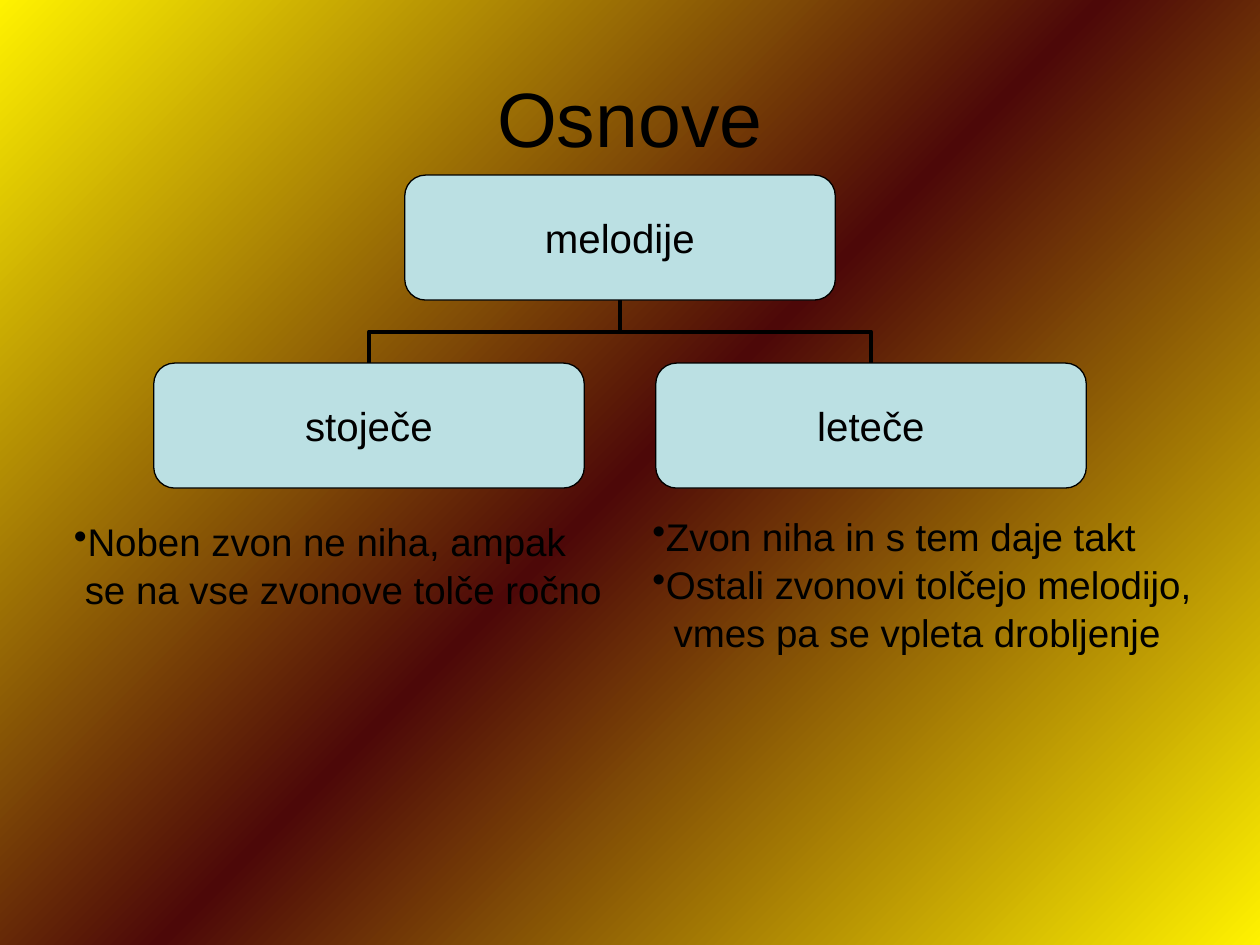
from copy import deepcopy
from dataclasses import dataclass

from lxml.etree import SubElement
from pptx import Presentation
from pptx.dml.color import RGBColor
from pptx.enum.shapes import MSO_CONNECTOR, MSO_SHAPE
from pptx.enum.text import MSO_ANCHOR, PP_ALIGN
from pptx.oxml.ns import qn
from pptx.shapes.autoshape import Shape
from pptx.slide import Slide
from pptx.util import Cm, Pt


@dataclass(frozen=True)
class Theme:
    font: str = "Arial"
    text: str = "000000"
    box: str = "BBE0E3"
    background: tuple = ((0, "FFF200"), (0.5, "4D0808"), (1, "FFF200"))
    title_size: int = 44
    box_size: int = 23
    note_size: int = 22
    line_spacing: float = 1.04


@dataclass(frozen=True)
class Node:
    label: str
    center: float
    top: float


@dataclass(frozen=True)
class NoteLine:
    text: str
    bullet: bool = True
    indent: float = 0


@dataclass(frozen=True)
class Note:
    left: float
    top: float
    height: float
    lines: tuple


THEME = Theme()
BLACK = RGBColor.from_string(THEME.text)
BOX_WIDTH, BOX_HEIGHT = 8.68, 2.52
NOTE_WIDTH = 11.4
ROOT_CENTER, CHILD_OFFSET = 12.5, 5.06
ROOT_TOP, CHILD_TOP = 3.53, 7.32

ROOT = Node("melodije", ROOT_CENTER, ROOT_TOP)
CHILDREN = (
    Node("stoječe", ROOT_CENTER - CHILD_OFFSET, CHILD_TOP),
    Node("leteče", ROOT_CENTER + CHILD_OFFSET, CHILD_TOP),
)
NOTES = (
    Note(12.9, 10.18, 4, (
        NoteLine("Zvon niha in s tem daje takt"),
        NoteLine("Ostali zvonovi tolčejo melodijo,"),
        NoteLine("vmes pa se vpleta drobljenje", False, 0.43),
    )),
    Note(1.24, 10.29, 2.13, (
        NoteLine("Noben zvon ne niha, ampak"),
        NoteLine("se na vse zvonove tolče ročno", False, 0.22),
    )),
)


def paint_background(slide: Slide) -> None:
    fill = slide.background.fill
    fill.gradient()
    fill.gradient_angle = 135
    stop_list = slide.element.find(".//" + qn("a:gsLst"))
    stop_list.append(deepcopy(stop_list[0]))
    for stop, (position, color) in zip(fill.gradient_stops, THEME.background):
        stop.position = position
        stop.color.rgb = RGBColor.from_string(color)


def style_paragraph(paragraph, size: int) -> None:
    paragraph.font.name = THEME.font
    paragraph.font.size = Pt(size)
    paragraph.font.color.rgb = BLACK


def add_title(slide: Slide, text: str) -> None:
    frame = slide.shapes.add_textbox(Cm(1.27), Cm(0.76), Cm(22.86), Cm(3.18)).text_frame
    frame.word_wrap = True
    frame.vertical_anchor = MSO_ANCHOR.MIDDLE
    paragraph = frame.paragraphs[0]
    paragraph.text = text
    paragraph.alignment = PP_ALIGN.CENTER
    style_paragraph(paragraph, THEME.title_size)


def add_node(slide: Slide, node: Node) -> Shape:
    shape = slide.shapes.add_shape(
        MSO_SHAPE.ROUNDED_RECTANGLE, Cm(node.center - BOX_WIDTH / 2), Cm(node.top),
        Cm(BOX_WIDTH), Cm(BOX_HEIGHT))
    shape.shadow.inherit = False
    shape.fill.solid()
    shape.fill.fore_color.rgb = RGBColor.from_string(THEME.box)
    shape.line.color.rgb = BLACK
    shape.line.width = Pt(0.75)
    frame = shape.text_frame
    frame.margin_left = frame.margin_right = frame.margin_top = frame.margin_bottom = 0
    frame.vertical_anchor = MSO_ANCHOR.MIDDLE
    paragraph = frame.paragraphs[0]
    paragraph.text = node.label
    paragraph.alignment = PP_ALIGN.CENTER
    style_paragraph(paragraph, THEME.box_size)
    return shape


def join_nodes(slide: Slide, parent: Shape, child: Shape) -> None:
    connector = slide.shapes.add_connector(MSO_CONNECTOR.ELBOW, 0, 0, 0, 0)
    connector.begin_connect(parent, 2)
    connector.end_connect(child, 0)
    # Turn the elbow a quarter so that it leaves and arrives vertically
    start_x = parent.left + parent.width // 2
    end_x = child.left + child.width // 2
    start_y, end_y = parent.top + parent.height, child.top
    connector.width, connector.height = end_y - start_y, abs(end_x - start_x)
    connector.left = (start_x + end_x - connector.width) // 2
    connector.top = (start_y + end_y - connector.height) // 2
    to_right = end_x > start_x
    properties = connector._element.spPr
    transform = properties.find(qn("a:xfrm"))
    transform.set("rot", str((270 if to_right else 90) * 60000))
    transform.set("flipH", "1" if to_right else "0")
    transform.set("flipV", "0")
    connector.line.color.rgb = BLACK
    connector.line.width = Pt(2.25)
    SubElement(properties, qn("a:effectLst"))


def add_note(slide: Slide, note: Note) -> None:
    frame = slide.shapes.add_textbox(
        Cm(note.left), Cm(note.top), Cm(NOTE_WIDTH), Cm(note.height)).text_frame
    frame.word_wrap = True
    for index, line in enumerate(note.lines):
        paragraph = frame.add_paragraph() if index else frame.paragraphs[0]
        paragraph.text = line.text
        paragraph.line_spacing = THEME.line_spacing
        properties = paragraph._p.get_or_add_pPr()
        properties.set("marL", str(Cm(line.indent)))
        properties.set("indent", "0")
        if line.bullet:
            color = SubElement(properties, qn("a:buClr"))
            SubElement(color, qn("a:srgbClr"), val=THEME.text)
            SubElement(properties, qn("a:buChar"), char="•")
        style_paragraph(paragraph, THEME.note_size)


def main() -> None:
    presentation = Presentation()
    presentation.slide_width, presentation.slide_height = Cm(25.4), Cm(19.05)
    slide = presentation.slides.add_slide(presentation.slide_layouts[6])
    paint_background(slide)
    add_title(slide, "Osnove")

    # Tree of melody kinds
    root = add_node(slide, ROOT)
    for node in CHILDREN:
        join_nodes(slide, root, add_node(slide, node))

    # Explanations under the tree
    for note in NOTES:
        add_note(slide, note)
    presentation.save("out.pptx")


if __name__ == "__main__":
    main()
